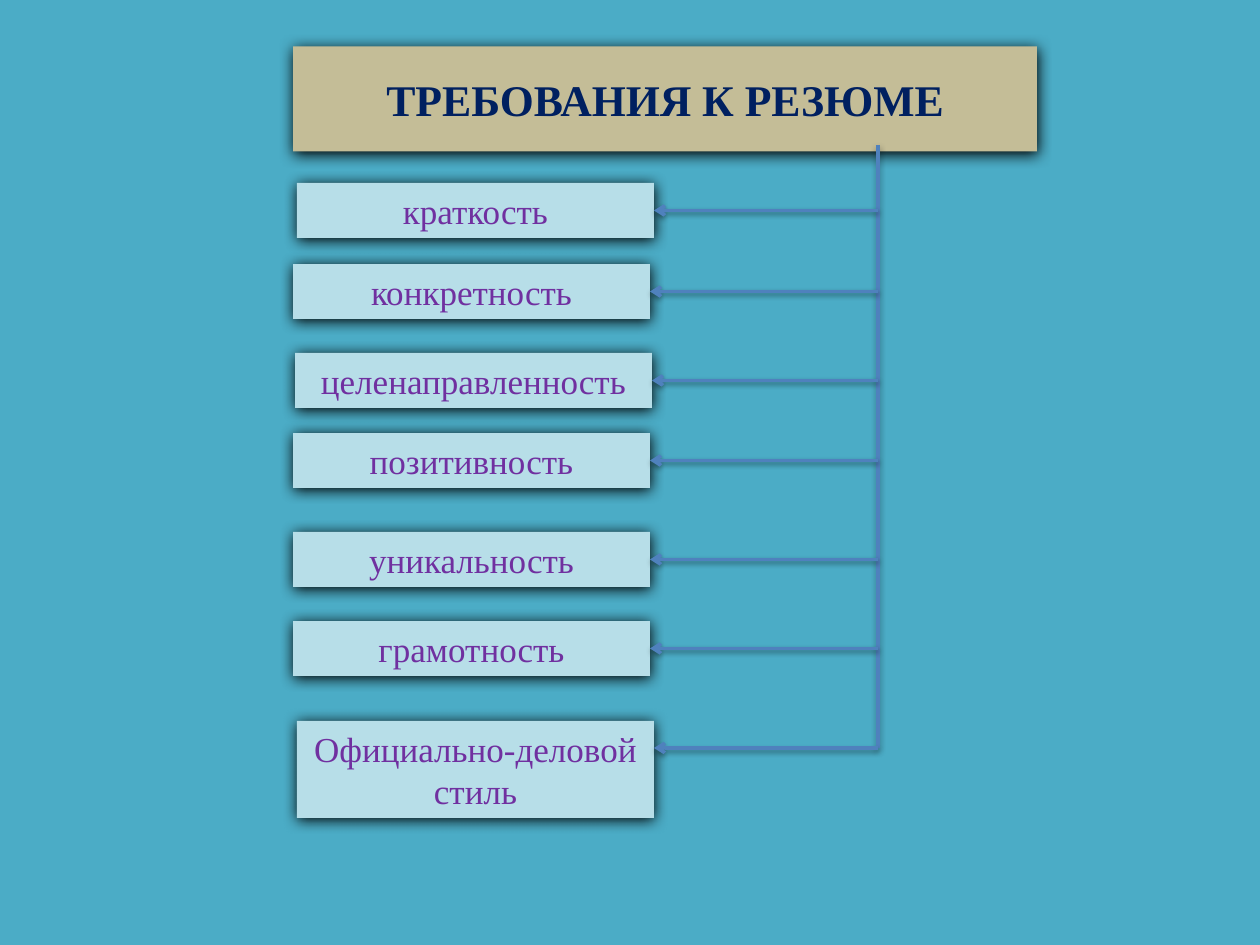
from lxml.etree import SubElement
from pptx import Presentation
from pptx.dml.color import RGBColor
from pptx.enum.shapes import MSO_CONNECTOR as CONNECTOR, MSO_SHAPE as SHAPE
from pptx.enum.text import MSO_ANCHOR as ANCHOR, MSO_AUTO_SIZE as AUTO_SIZE, PP_ALIGN as ALIGN
from pptx.oxml.ns import qn
from pptx.util import Emu, Pt

TEAL = RGBColor(0x4B, 0xAC, 0xC6)
TAN = RGBColor(0xC4, 0xBD, 0x97)
NAVY = RGBColor(0x00, 0x20, 0x60)
PALE_BLUE = RGBColor(0xB7, 0xDE, 0xE8)
PURPLE = RGBColor(0x70, 0x30, 0xA0)
BLUE = RGBColor(0x4F, 0x81, 0xBD)

PX = 914400 / 126
BOX_WIDTH = 357
TRUNK_X = 878
TRUNK_TOP, TRUNK_BOTTOM = 145, 748

# text, left, top, height
REQUIREMENTS = [
    ("краткость", 297, 183, 55),
    ("конкретность", 293, 264, 55),
    ("целенаправленность", 295, 353, 55),
    ("позитивность", 293, 433, 55),
    ("уникальность", 293, 532, 55),
    ("грамотность", 293, 621, 55),
    ("Официально-деловой стиль", 297, 721, 97),
]


def format_box(box, place, text, size, color, fill, bold=False):
    box.left, box.top, box.width, box.height = [Emu(round(n * PX)) for n in place]
    box.fill.solid()
    box.fill.fore_color.rgb = fill
    box.line.fill.background()
    frame = box.text_frame
    frame.text = text
    frame.word_wrap = True
    frame.auto_size = AUTO_SIZE.SHAPE_TO_FIT_TEXT
    frame.vertical_anchor = ANCHOR.MIDDLE
    paragraph = frame.paragraphs[0]
    paragraph.alignment = ALIGN.CENTER
    font = paragraph.runs[0].font
    font.name, font.size, font.bold = "Times New Roman", Pt(size), bold
    font.color.rgb = color
    add_shadow(box, 8.5, 1, 100)


def add_shadow(shape, blur, distance, opacity):
    """Give the shape a black shadow straight below; lengths in points, opacity in percent."""
    effects = SubElement(shape._element.spPr, qn("a:effectLst"))
    shadow = SubElement(effects, qn("a:outerShdw"), blurRad=str(Pt(blur)),
                        dist=str(Pt(distance)), dir="5400000", rotWithShape="0")
    black = SubElement(shadow, qn("a:srgbClr"), val="000000")
    SubElement(black, qn("a:alpha"), val=str(opacity * 1000))


prs = Presentation()
prs.slide_width, prs.slide_height = Emu(round(1260 * PX)), Emu(round(945 * PX))
slide = prs.slides.add_slide(prs.slide_layouts[5])
slide.background.fill.solid()
slide.background.fill.fore_color.rgb = TEAL
shapes = slide.shapes

format_box(shapes.title, (293, 66, 744, 66), "ТРЕБОВАНИЯ К РЕЗЮМЕ", 25, NAVY, TAN, bold=True)

boxes = []
for text, left, top, height in REQUIREMENTS:
    box = shapes.add_shape(SHAPE.RECTANGLE, 0, 0, 0, 0)
    format_box(box, (left, top, BOX_WIDTH, height), text, 20, PURPLE, PALE_BLUE)
    boxes.append(box)

trunk_x, trunk_top, trunk_bottom = [Emu(round(n * PX)) for n in (TRUNK_X, TRUNK_TOP, TRUNK_BOTTOM)]
trunk = shapes.add_connector(CONNECTOR.STRAIGHT, trunk_x, trunk_top, trunk_x, trunk_bottom)

branches = []
for box in boxes:
    is_last = box is boxes[-1]
    y = trunk_bottom if is_last else box.top + box.height // 2
    branch = shapes.add_connector(CONNECTOR.STRAIGHT, trunk_x, y, box.left + box.width, y)
    if not is_last:  # the last branch meets its box above the middle
        branch.end_connect(box, 3)
    branches.append(branch)

for connector in [trunk] + branches:
    connector.line.color.rgb = BLUE
    connector.line.width = Pt(2)
    if connector is not trunk:
        SubElement(connector.line._get_or_add_ln(), qn("a:tailEnd"), type="arrow")
    add_shadow(connector, 3.1, 1.6, 38)

prs.save("out.pptx")
